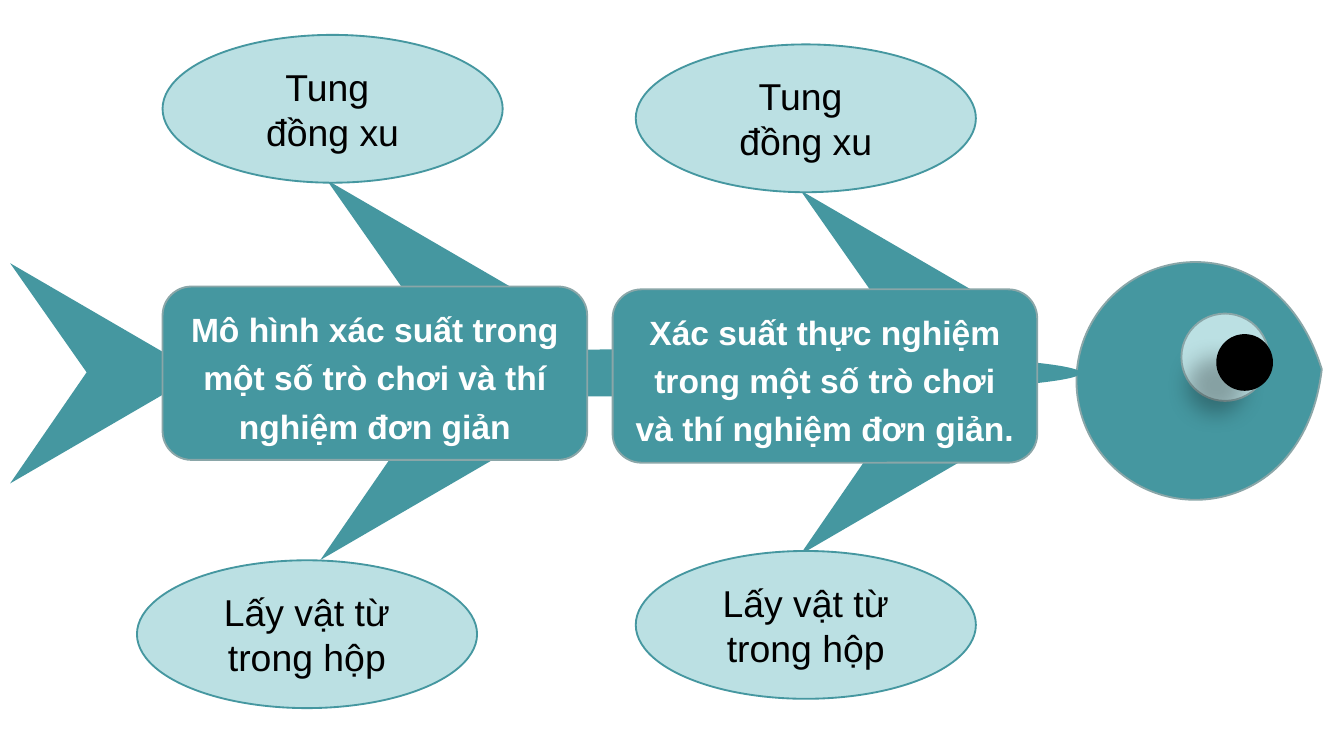
from dataclasses import dataclass

from lxml import etree
from pptx import Presentation
from pptx import util as u
from pptx.dml.color import RGBColor
from pptx.enum import shapes, text
from pptx.oxml import ns

Pt = u.Pt
Kind = shapes.MSO_SHAPE


@dataclass(frozen=True)
class Theme:
    teal: str = "4597A0"
    pale: str = "BBE0E3"
    edge: str = "8AA6A8"
    black: str = "000000"
    white: str = "FFFFFF"
    font: str = "Arial"
    topic_size: int = 18
    example_size: int = 20
    line_width: int = 1


def write(shape, words, *, size, color, font, bold=False, spacing=None):
    """Put centred text in a shape, one paragraph for each line of words."""
    frame = shape.text_frame
    frame.word_wrap = True
    frame.vertical_anchor = text.MSO_ANCHOR.MIDDLE
    for number, line in enumerate(words.split("\n")):
        para = frame.add_paragraph() if number else frame.paragraphs[0]
        para.alignment = text.PP_ALIGN.CENTER
        if spacing:
            para.line_spacing = spacing
        span = para.add_run()
        span.text = line
        span.font.name = font
        span.font.size = Pt(size)
        span.font.bold = bold
        span.font.color.rgb = RGBColor.from_string(color)


class FishDiagram:
    def __init__(self, page, theme):
        self.page = page
        self.theme = theme

    def paint(self, shape, fill, line=None):
        shape.shadow.inherit = False
        shape.fill.solid()
        shape.fill.fore_color.rgb = RGBColor.from_string(fill)
        if line:
            shape.line.color.rgb = RGBColor.from_string(line)
            shape.line.width = Pt(self.theme.line_width)
        else:
            shape.line.fill.background()
        return shape

    def body(self, kind, left, top, width, height, fill, line=None):
        box = self.page.shapes.add_shape(
            kind, Pt(left), Pt(top), Pt(width), Pt(height))
        return self.paint(box, fill, line)

    def fin(self, left, top):
        """Notched arrow pointing right, placed by its upper tip."""
        offsets = [(101.5, 59), (0, 118), (41, 58.5)]
        outline = self.page.shapes.build_freeform(Pt(left), Pt(top))
        outline.add_line_segments(
            [(Pt(left + dx), Pt(top + dy)) for dx, dy in offsets], close=True)
        return self.paint(outline.convert_to_shape(), self.theme.teal)

    def topic(self, left, top, words):
        box = self.body(Kind.ROUNDED_RECTANGLE, left, top, 227.5, 92.9,
                        self.theme.teal, self.theme.edge)
        write(box, words, size=self.theme.topic_size, color=self.theme.white,
              font=self.theme.font, bold=True, spacing=1.2)

    def example(self, left, top, words):
        bubble = self.body(Kind.OVAL, left, top, 182.2, 79.2,
                           self.theme.pale, self.theme.teal)
        write(bubble, words, size=self.theme.example_size,
              color=self.theme.black, font=self.theme.font)

    def cast_shadow(self, shape, *, color, alpha, blur, distance, angle):
        effects = shape._element.spPr.find(ns.qn("a:effectLst"))
        shadow = etree.SubElement(
            effects, ns.qn("a:outerShdw"), blurRad=str(Pt(blur)),
            dist=str(Pt(distance)), dir=str(angle * 60000),
            algn="ctr", rotWithShape="0")
        tint = etree.SubElement(shadow, ns.qn("a:srgbClr"), val=color)
        etree.SubElement(tint, ns.qn("a:alpha"), val=str(alpha * 1000))


def main():
    deck = Presentation()
    deck.slide_width, deck.slide_height = Pt(720), Pt(405)
    theme = Theme()
    fish = FishDiagram(deck.slides.add_slide(deck.slide_layouts[6]), theme)

    # Head and eye
    head = fish.body(Kind.TEAR, 576.7, 140.4, 127.4, 127.4,
                     theme.teal, theme.edge)
    head.adjustments[0] = 0.755
    head.rotation = 39.7
    fish.body(Kind.OVAL, 632.9, 168, 46.8, 46.8, theme.pale, theme.edge)
    pupil = fish.body(Kind.OVAL, 651.6, 179, 30.4, 30.4, theme.black)
    fish.cast_shadow(pupil, color=theme.black, alpha=28, blur=11.8,
                     distance=19.7, angle=141)

    # Spine, then the tail and four fins
    fish.body(Kind.OVAL, 101.5, 187.2, 477.4, 25.2, theme.teal)
    for left, top in [(5.4, 141), (175, 96.4), (171.6, 182),
                      (428.8, 102), (428.6, 179.2)]:
        fish.fin(left, top)

    # Main topics
    fish.topic(87.1, 153.5, "Mô hình xác suất trong một số trò chơi "
                            "và thí nghiệm đơn giản")
    fish.topic(328.2, 155, "Xác suất thực nghiệm trong một số trò chơi "
                           "và thí nghiệm đơn giản.")

    # Examples below and above
    draw_object, toss_coin = "Lấy vật từ trong hộp", "Tung \nđồng xu"
    for left, top, words in [(73.4, 300.2, draw_object),
                             (340.6, 295.2, draw_object),
                             (87.1, 18.7, toss_coin),
                             (340.6, 23.8, toss_coin)]:
        fish.example(left, top, words)

    deck.save("out.pptx")


if __name__ == "__main__":
    main()
